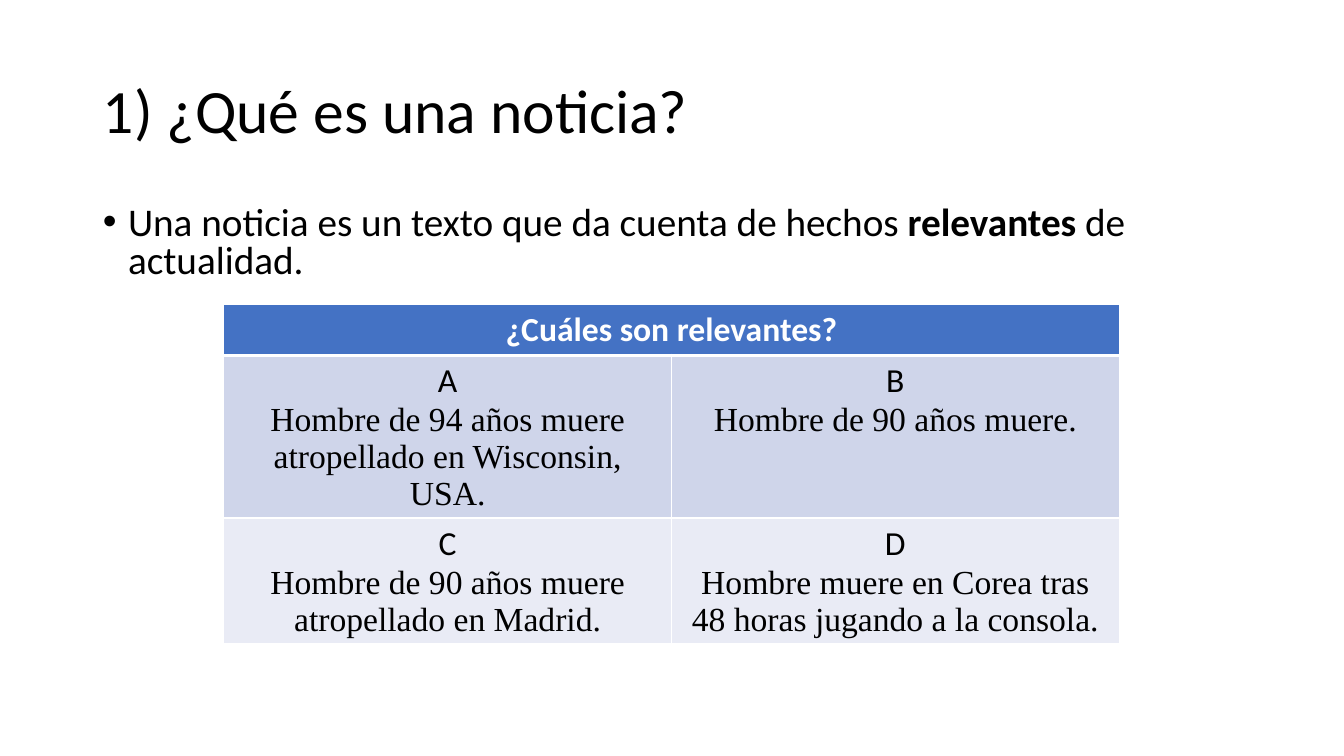
from dataclasses import dataclass

from lxml.etree import SubElement
from pptx import Presentation
from pptx.dml.color import RGBColor
from pptx.enum.text import MSO_ANCHOR, MSO_AUTO_SIZE, PP_ALIGN
from pptx.oxml.ns import qn
from pptx.util import Pt

PX = 9144  # 100 px to the inch
COLORS = {
    "text": "000000",
    "white": "FFFFFF",
    "header": "4472C4",
    "band1": "CFD5EA",
    "band2": "E9EBF5",
}
SANS, SERIF = "Calibri", "Times New Roman"


@dataclass
class Headline:
    letter: str
    text: str
    row: int
    col: int
    fill: str


HEADLINES = [
    Headline("A", "Hombre de 94 años muere atropellado en Wisconsin, USA.", 1, 0, "band1"),
    Headline("B", "Hombre de 90 años muere.", 1, 1, "band1"),
    Headline("C", "Hombre de 90 años muere atropellado en Madrid.", 2, 0, "band2"),
    Headline("D", "Hombre muere en Corea tras 48 horas jugando a la consola.", 2, 1, "band2"),
]


def rgb(name: str) -> RGBColor:
    return RGBColor.from_string(COLORS[name])


def place(sp, left: int, top: int, width: int, height: int) -> None:
    sp.left, sp.top, sp.width, sp.height = (v * PX for v in (left, top, width, height))


def format_run(r, size: int, face: str = SANS, color: str = "text", bold: bool = False) -> None:
    r.font.size = Pt(size)
    r.font.name = face
    r.font.bold = bold
    r.font.color.rgb = rgb(color)


def add_bullet(p) -> None:
    p_pr = p._p.get_or_add_pPr()
    p_pr.set("marL", str(25 * PX))
    p_pr.set("indent", str(-25 * PX))
    SubElement(p_pr, qn("a:buFont"), typeface="Arial")
    SubElement(p_pr, qn("a:buChar"), char="•")


def style_cell(cell, fill: str, top: int = 1, bottom: int = 1) -> None:
    """Draw white borders, with widths in points, then fill the cell."""
    tc_pr = cell._tc.get_or_add_tcPr()
    for side, width in (("L", 1), ("R", 1), ("T", top), ("B", bottom)):
        ln = SubElement(tc_pr, qn(f"a:ln{side}"), w=str(Pt(width)))
        solid = SubElement(ln, qn("a:solidFill"))
        SubElement(solid, qn("a:srgbClr"), val=COLORS["white"])
    cell.fill.solid()
    cell.fill.fore_color.rgb = rgb(fill)


def add_title(s) -> None:
    sp = s.shapes.title
    place(sp, 92, 40, 1150, 145)
    tf = sp.text_frame
    tf.text = "1) ¿Qué es una noticia?"
    tf.auto_size = MSO_AUTO_SIZE.NONE
    tf.vertical_anchor = MSO_ANCHOR.MIDDLE
    p = tf.paragraphs[0]
    p.alignment = PP_ALIGN.LEFT
    p.line_spacing = 0.9
    format_run(p.runs[0], 44)


def add_definition(s) -> None:
    sp = s.placeholders[1]
    place(sp, 92, 200, 1150, 88)
    tf = sp.text_frame
    tf.auto_size = MSO_AUTO_SIZE.NONE
    p = tf.paragraphs[0]
    add_bullet(p)
    p.line_spacing = 0.8
    p.space_before = Pt(0)
    parts = ("Una noticia es un texto que da cuenta de hechos ", "relevantes", " de actualidad.")
    for part in parts:
        r = p.add_run()
        r.text = part
        format_run(r, 28, bold=part == "relevantes")


def add_headlines(s) -> None:
    frame = s.shapes.add_table(3, 2, 222 * PX, 302 * PX, 888 * PX, 335 * PX)
    table = frame.table
    for row, height in zip(table.rows, (50, 161, 124)):
        row.height = height * PX

    header = table.cell(0, 0)
    header.merge(table.cell(0, 1))
    for cell in table.rows[0].cells:
        style_cell(cell, "header", bottom=3)
    header.text_frame.text = "¿Cuáles son relevantes?"
    p = header.text_frame.paragraphs[0]
    p.alignment = PP_ALIGN.CENTER
    format_run(p.runs[0], 24, color="white", bold=True)

    for item in HEADLINES:
        cell = table.cell(item.row, item.col)
        style_cell(cell, item.fill, top=3 if item.row == 1 else 1)
        tf = cell.text_frame
        tf.text = f"{item.letter}\n{item.text}"
        for p, face in zip(tf.paragraphs, (SANS, SERIF)):
            p.alignment = PP_ALIGN.CENTER
            format_run(p.runs[0], 24, face)


def main() -> None:
    prs = Presentation()
    prs.slide_width, prs.slide_height = 1333 * PX, 750 * PX
    s = prs.slides.add_slide(prs.slide_layouts[1])
    add_title(s)
    add_definition(s)
    add_headlines(s)
    prs.save("out.pptx")


if __name__ == "__main__":
    main()
